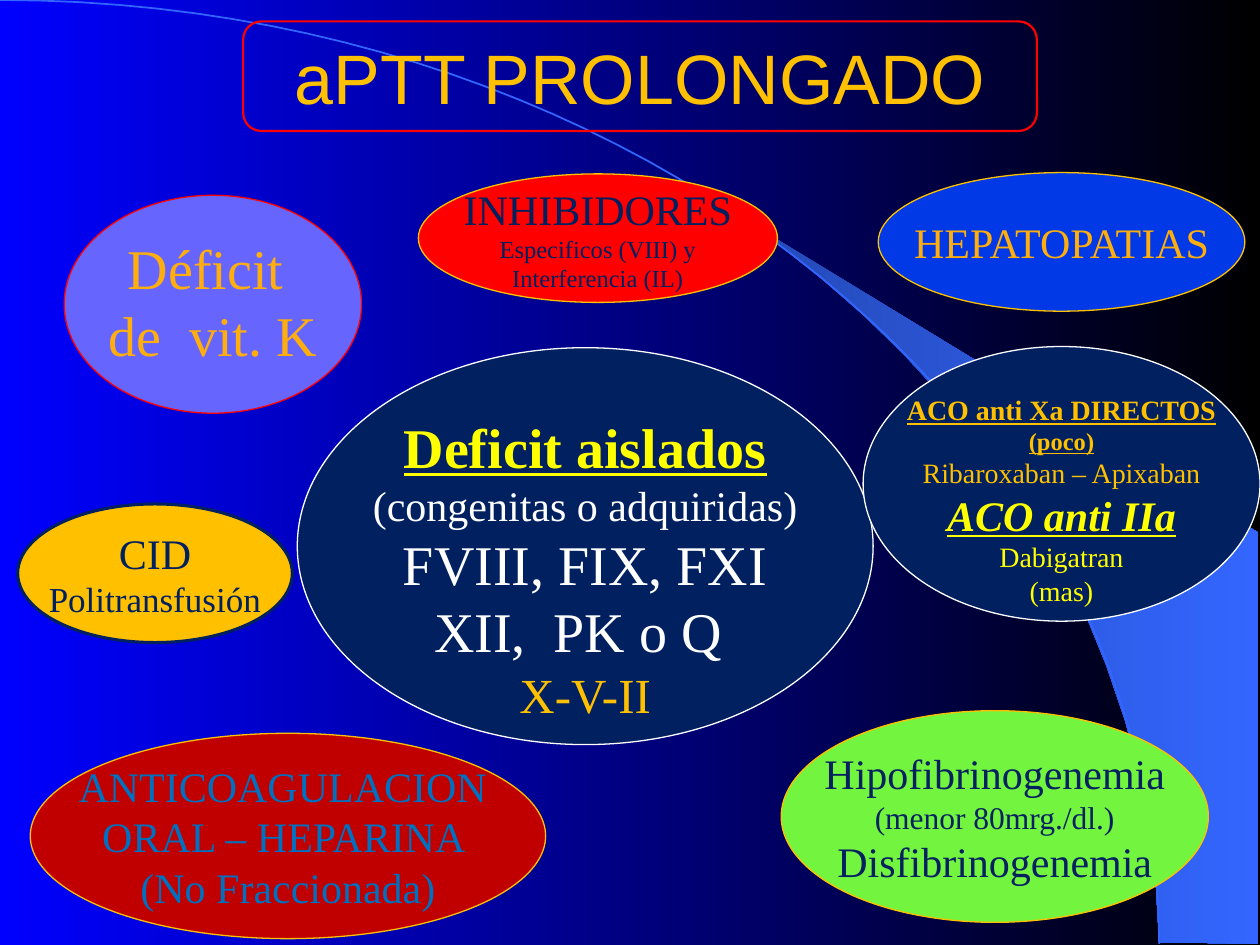
from pptx import Presentation
from pptx.dml.color import RGBColor
from pptx.enum import shapes, text
from pptx.util import Inches, Pt

BLUE = RGBColor(0x00, 0x00, 0xFF)
BLACK = RGBColor(0x00, 0x00, 0x00)
DUSK = RGBColor(0x24, 0x49, 0xB6)
SKY = RGBColor(0x33, 0x66, 0xFF)
RED = RGBColor(0xFF, 0x00, 0x00)
GOLD = RGBColor(0xFF, 0xC0, 0x00)
AMBER = RGBColor(0xFF, 0xAE, 0x0D)
NAVY = RGBColor(0x00, 0x20, 0x60)
WHITE = RGBColor(0xFF, 0xFF, 0xFF)
YELLOW = RGBColor(0xFF, 0xFF, 0x00)
LILAC = RGBColor(0x66, 0x66, 0xFF)
ROYAL = RGBColor(0x00, 0x39, 0xE5)
WINE = RGBColor(0xC0, 0x00, 0x00)
STEEL = RGBColor(0x00, 0x70, 0xC0)
GREEN = RGBColor(0x73, 0xF4, 0x3F)

ROUND = shapes.MSO_SHAPE.ROUNDED_RECTANGLE
OVAL = shapes.MSO_SHAPE.OVAL
TOP = text.MSO_ANCHOR.TOP
MID = text.MSO_ANCHOR.MIDDLE
SERIF = "Times New Roman"
HEAD = {"bold": True, "underline": True}

# Beam of light: outer corners, then the curved inner edge
BEAM = [(9.2, 7.48), (9.99, 7.49), (9.99, 4.23), (5.89, 1.73), (6.24, 1.99),
        (6.53, 2.22), (6.85, 2.5), (7.16, 2.8), (7.62, 3.3), (8.03, 3.84),
        (8.32, 4.31), (8.58, 4.79), (8.78, 5.28), (8.93, 5.72), (9.03, 6.09),
        (9.13, 6.56), (9.17, 6.96)]

# Ovals: box, fill, line colour, line width, anchor, lines of (words, size, colour, style)
OVALS = [
    ((2.36, 2.76, 4.57, 3.15), NAVY, WHITE, 0.75, TOP, [
        ("Deficit aislados", 32, YELLOW, HEAD),
        ("(congenitas o adquiridas)", 24, WHITE, {}),
        ("FVIII, FIX, FXI", 32, WHITE, {}),
        ("XII,  PK o Q ", 32, WHITE, {}),
        ("X-V-II", 28, GOLD, {})]),
    ((0.51, 1.55, 2.36, 1.73), LILAC, RED, 0.75, TOP, [
        ("Déficit ", 32, AMBER, {}),
        ("de  vit. K", 32, AMBER, {})]),
    ((6.97, 1.37, 2.91, 1.1), ROYAL, GOLD, 0.75, MID, [
        ("HEPATOPATIAS", 24, AMBER, {})]),
    ((0.24, 5.82, 4.09, 1.63), WINE, GOLD, 0.75, MID, [
        ("ANTICOAGULACION ", 24, STEEL, {}),
        ("ORAL – HEPARINA ", 24, STEEL, {}),
        ("(No Fraccionada)", 24, STEEL, {})]),
    ((0.14, 4, 2.18, 1.1), GOLD, NAVY, 1.75, MID, [
        ("CID", 24, NAVY, {}),
        ("Politransfusión", 20, NAVY, {})]),
    ((3.32, 1.38, 2.85, 1.02), RED, GOLD, 0.75, MID, [
        ("INHIBIDORES", 24, NAVY, {}),
        ("Especificos (VIII) y", 14, NAVY, {}),
        ("Interferencia (IL)", 14, NAVY, {})]),
    ((6.2, 5.64, 3.39, 1.68), GREEN, GOLD, 0.75, MID, [
        ("Hipofibrinogenemia", 24, NAVY, {}),
        ("(menor 80mrg./dl.)", 18, NAVY, {}),
        ("Disfibrinogenemia", 24, NAVY, {})]),
    ((6.85, 2.75, 3.15, 2.18), NAVY, WHITE, 0.75, TOP, [
        ("ACO anti Xa DIRECTOS", 16, GOLD, HEAD),
        ("(poco)", 14, GOLD, HEAD),
        ("Ribaroxaban – Apixaban", 16, GOLD, {}),
        ("ACO anti IIa", 24, YELLOW, {**HEAD, "italic": True}),
        ("Dabigatran", 16, YELLOW, {}),
        ("(mas)", 16, YELLOW, {})]),
]


def fade(fill, start, end):
    """Left-to-right gradient between two colours."""
    fill.gradient()
    fill.gradient_angle = 0
    for stop, tint in zip(fill.gradient_stops, (start, end)):
        stop.color.rgb = tint


def paint(shape, fill, line, width):
    shape.shadow.inherit = False
    if fill is None:
        shape.fill.background()
    else:
        shape.fill.solid()
        shape.fill.fore_color.rgb = fill
    shape.line.color.rgb = line
    shape.line.width = Pt(width)


def trace(slide, points, close):
    pen = slide.shapes.build_freeform(
        *[Inches(v) for v in points[0]], scale=1.0)
    pen.add_line_segments(
        [(Inches(x), Inches(y)) for x, y in points[1:]], close=close)
    return pen.convert_to_shape()


def curve(ends, steps=48):
    """Points along a cubic Bezier curve."""
    out = []
    for n in range(steps + 1):
        t = n / steps
        parts = ((1 - t) ** 3, 3 * t * (1 - t) ** 2, 3 * t * t * (1 - t), t ** 3)
        out.append(tuple(sum(w * p[k] for w, p in zip(parts, ends))
                         for k in (0, 1)))
    return out


def label(slide, kind, box, fill, line, width, anchor, lines, face=SERIF):
    """Preset shape with one centred paragraph per line."""
    shape = slide.shapes.add_shape(kind, *[Inches(v) for v in box])
    paint(shape, fill, line, width)
    frame = shape.text_frame
    frame.word_wrap = False
    frame.vertical_anchor = anchor
    for n, (words, size, tint, style) in enumerate(lines):
        para = frame.add_paragraph() if n else frame.paragraphs[0]
        para.alignment = text.PP_ALIGN.CENTER
        run = para.add_run()
        run.text = words
        run.font.color.rgb = tint
        for key, value in {"name": face, "size": Pt(size), **style}.items():
            setattr(run.font, key, value)


def main():
    deck = Presentation()
    deck.slide_width, deck.slide_height = Inches(10), Inches(7.5)
    slide = deck.slides.add_slide(deck.slide_layouts[6])

    # Backdrop
    fade(slide.background.fill, BLUE, BLACK)
    beam = trace(slide, BEAM, True)
    beam.shadow.inherit = False
    beam.line.fill.background()
    fade(beam.fill, DUSK, SKY)
    arc = curve([(0, 0), (5.08, 0), (9.2, 3.35), (9.2, 7.49)])
    paint(trace(slide, arc, False), None, SKY, 1)

    # Title
    label(slide, ROUND, (1.93, 0.17, 6.3, 0.87), None, RED, 1.25, MID,
          [("aPTT PROLONGADO", 40, GOLD, {})], "Arial")

    # Causes
    for oval in OVALS:
        label(slide, OVAL, *oval)

    deck.save("out.pptx")


if __name__ == "__main__":
    main()
